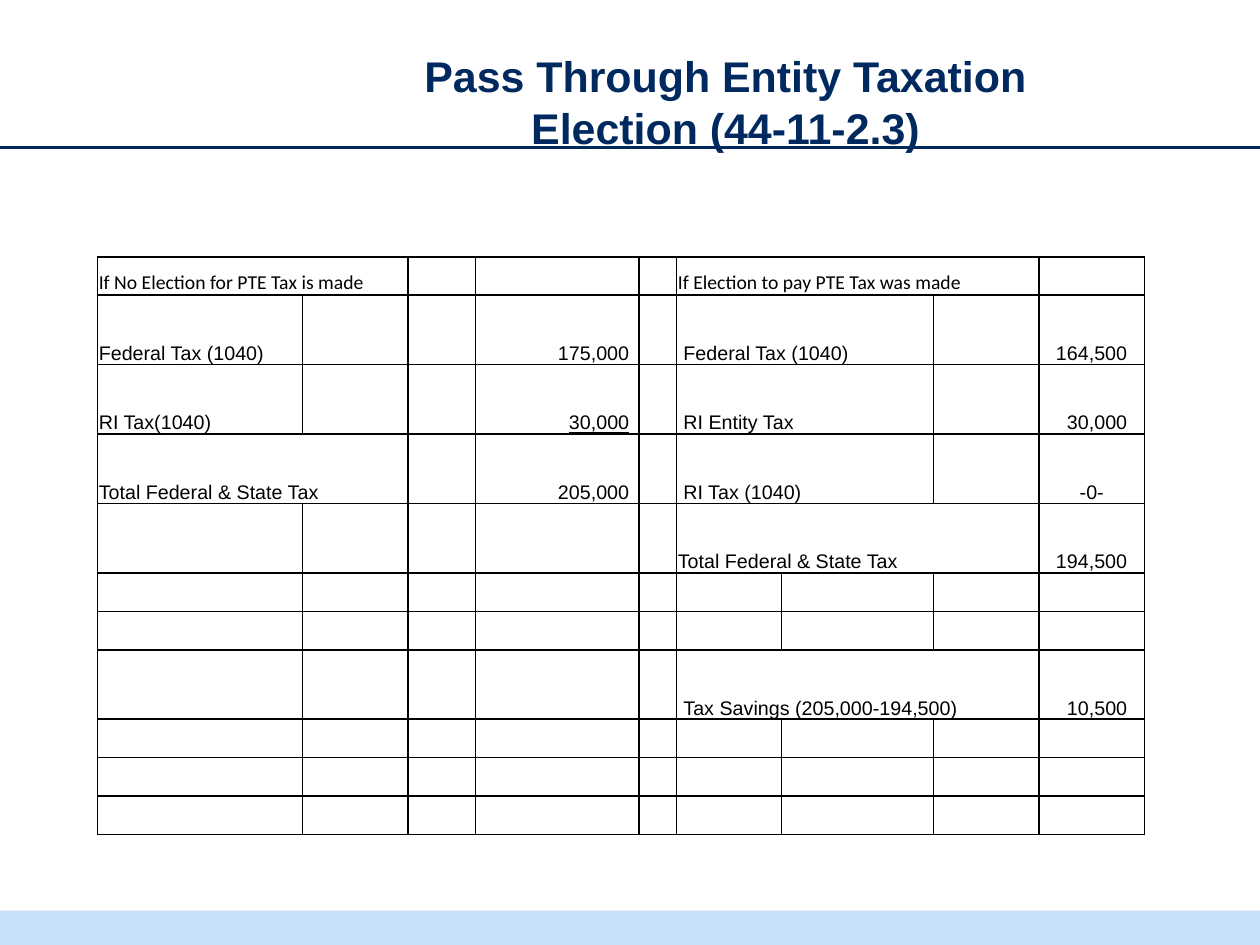
from lxml import etree
from pptx import Presentation, util as u
from pptx.dml.color import RGBColor
from pptx.enum import shapes, text
from pptx.oxml.ns import qn

SLIDE_W, SLIDE_H = 24.87, 18.66
NAVY, PALE_BLUE, BLACK = "002960", "C7DFFB", "000000"

COLUMN_WIDTHS = [4.05, 2.08, 1.34, 3.22, 0.74, 2.08, 3, 2.08, 2.08]
SHORT_ROW, TALL_ROW = 0.76, 1.37
ROW_COUNT = 11
TALL_ROWS = {1, 2, 3, 4, 7}
CELL_GAP, INDENT = 0.03, 0.14

# (row, column): (wording, columns spanned, left gap)
LABELS = {
    (0, 0): ("If No Election for PTE Tax is made", 2, CELL_GAP),
    (1, 0): ("Federal Tax (1040)", 1, CELL_GAP),
    (2, 0): ("RI Tax(1040)", 1, CELL_GAP),
    (3, 0): ("Total Federal & State Tax", 2, CELL_GAP),
    (0, 5): ("If Election to pay PTE Tax was made", 3, CELL_GAP),
    (1, 5): ("Federal Tax (1040)", 2, INDENT),
    (2, 5): ("RI Entity Tax", 2, INDENT),
    (3, 5): ("RI Tax (1040)", 2, INDENT),
    (4, 5): ("Total Federal & State Tax", 3, CELL_GAP),
    (7, 5): ("Tax Savings (205,000-194,500)", 3, INDENT),
}
AMOUNTS = {
    (1, 3): "175,000", (2, 3): "30,000", (3, 3): "205,000",
    (1, 8): "164,500", (2, 8): "30,000", (4, 8): "194,500", (7, 8): "10,500",
}
AMOUNT_GAPS = {3: 0.19, 8: 0.34}
UNDERLINED_AMOUNT = (2, 3)


def color(value):
    return RGBColor.from_string(value)


def style(font, name, size, value, bold=False):
    font.name, font.size, font.bold = name, u.Pt(size), bold
    font.color.rgb = color(value)


def add_title(slide, left, top, width, height):
    title = slide.shapes.title
    title.left, title.top = u.Cm(left), u.Cm(top)
    title.width, title.height = u.Cm(width), u.Cm(height)
    frame = title.text_frame
    frame.text = "Pass Through Entity Taxation Election (44-11-2.3)"
    frame.word_wrap = True
    frame.auto_size = text.MSO_AUTO_SIZE.NONE
    frame.vertical_anchor = text.MSO_ANCHOR.MIDDLE
    frame.margin_left = frame.margin_right = u.Cm(0.13)
    frame.margin_top = frame.margin_bottom = u.Cm(0.13)
    heading = frame.paragraphs[0]
    heading.alignment = text.PP_ALIGN.CENTER
    style(heading.runs[0].font, "Arial", 24, NAVY, bold=True)


def add_header_rule(slide, left, top, width):
    rule = slide.shapes.add_connector(
        shapes.MSO_CONNECTOR.STRAIGHT, u.Cm(left), u.Cm(top), u.Cm(left + width), u.Cm(top))
    rule.line.color.rgb = color(NAVY)
    rule.line.width = u.Pt(1.5)
    etree.SubElement(rule._element.spPr, qn("a:effectLst"))


def add_footer_band(slide, left, top, width, height):
    band = slide.shapes.add_shape(
        shapes.MSO_SHAPE.RECTANGLE, u.Cm(left), u.Cm(top), u.Cm(width), u.Cm(height))
    band.shadow.inherit = False
    band.fill.solid()
    band.fill.fore_color.rgb = color(PALE_BLUE)
    band.line.fill.background()


def prepare_cell(cell):
    """Give a cell black borders, no fill, tight margins and a small empty line."""
    properties = cell._tc.get_or_add_tcPr()
    for side in ("lnL", "lnR", "lnT", "lnB"):
        border = etree.SubElement(properties, qn(f"a:{side}"), w=str(u.Pt(1)))
        fill = etree.SubElement(border, qn("a:solidFill"))
        etree.SubElement(fill, qn("a:srgbClr"), val=BLACK)
    cell.fill.background()
    cell.margin_left = cell.margin_right = cell.margin_top = u.Cm(CELL_GAP)
    cell.margin_bottom = 0
    cell.vertical_anchor = text.MSO_ANCHOR.BOTTOM
    etree.SubElement(cell.text_frame.paragraphs[0]._p, qn("a:endParaRPr"), sz="1100")


def write_cell(cell, wording, alignment, font_name="Arial", underline=False):
    entry = cell.text_frame.paragraphs[0]
    entry.text = wording
    entry.alignment = alignment
    font = entry.runs[0].font
    style(font, font_name, 11, BLACK)
    font.underline = underline


def add_tax_table(slide, left, top):
    heights = [TALL_ROW if row in TALL_ROWS else SHORT_ROW for row in range(ROW_COUNT)]
    table = slide.shapes.add_table(
        ROW_COUNT, len(COLUMN_WIDTHS), u.Cm(left), u.Cm(top),
        u.Cm(sum(COLUMN_WIDTHS)), u.Cm(sum(heights))).table
    table.first_row = table.horz_banding = False
    for column, width in zip(table.columns, COLUMN_WIDTHS):
        column.width = u.Cm(width)
    for row, height in zip(table.rows, heights):
        row.height = u.Cm(height)
        for cell in row.cells:
            prepare_cell(cell)

    for (row, column), (wording, span, gap) in LABELS.items():
        cell = table.cell(row, column)
        if span > 1:
            cell.merge(table.cell(row, column + span - 1))
        cell.margin_left = u.Cm(gap)
        write_cell(cell, wording, text.PP_ALIGN.LEFT, "Arial" if row else "Calibri")
    for (row, column), amount in AMOUNTS.items():
        cell = table.cell(row, column)
        cell.margin_right = u.Cm(AMOUNT_GAPS[column])
        write_cell(cell, amount, text.PP_ALIGN.RIGHT,
                   underline=(row, column) == UNDERLINED_AMOUNT)
    write_cell(table.cell(3, 8), "-0-", text.PP_ALIGN.CENTER)


def main():
    deck = Presentation()
    deck.slide_width, deck.slide_height = u.Cm(SLIDE_W), u.Cm(SLIDE_H)
    slide = deck.slides.add_slide(deck.slide_layouts.get_by_name("Title Only"))
    add_footer_band(slide, 0, 17.98, SLIDE_W, SLIDE_H - 17.98)
    add_header_rule(slide, 0, 2.91, SLIDE_W)
    add_title(slide, 7.54, 0.85, 13.56, 2.31)
    add_tax_table(slide, 1.92, 5.07)
    deck.save("out.pptx")


if __name__ == "__main__":
    main()
